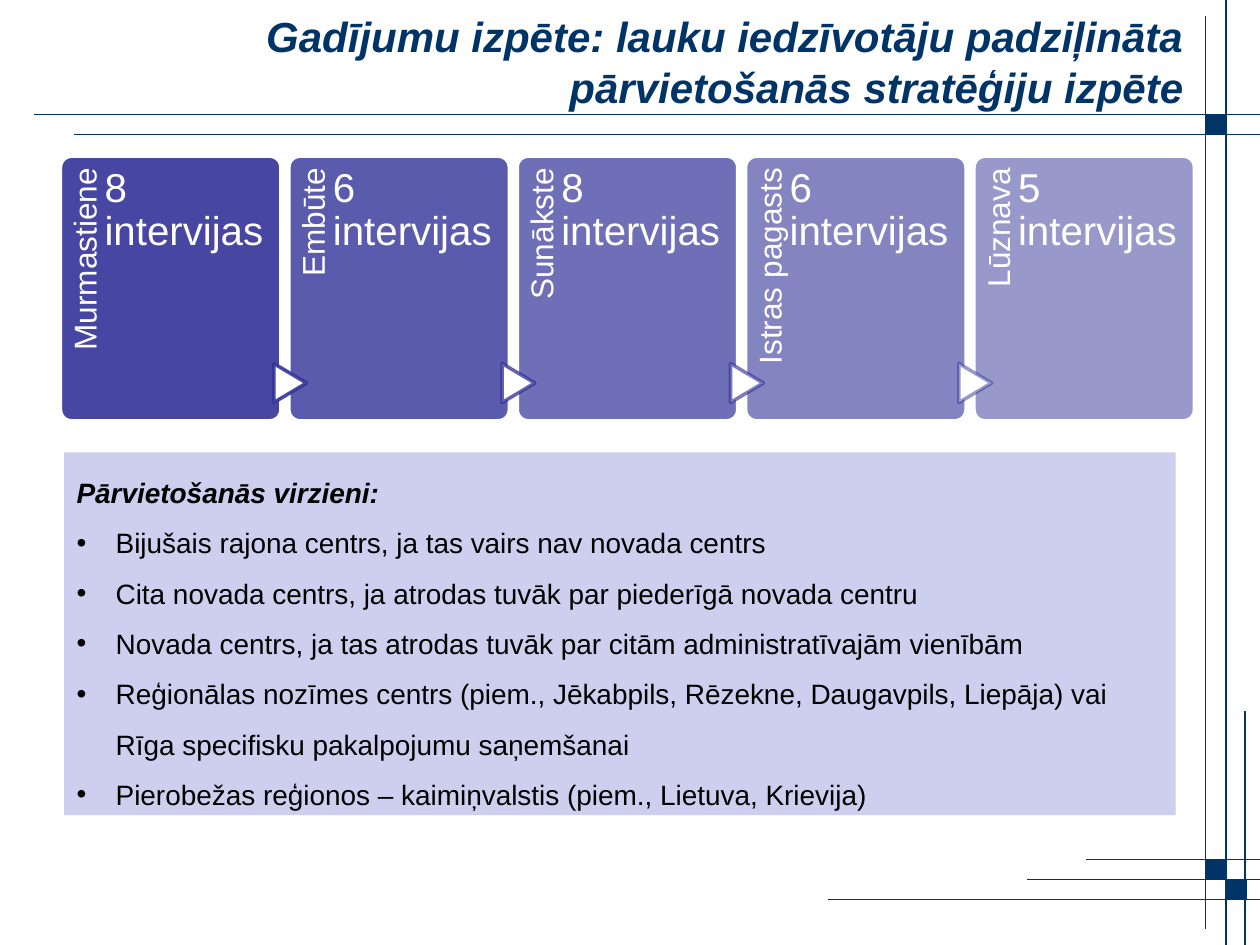
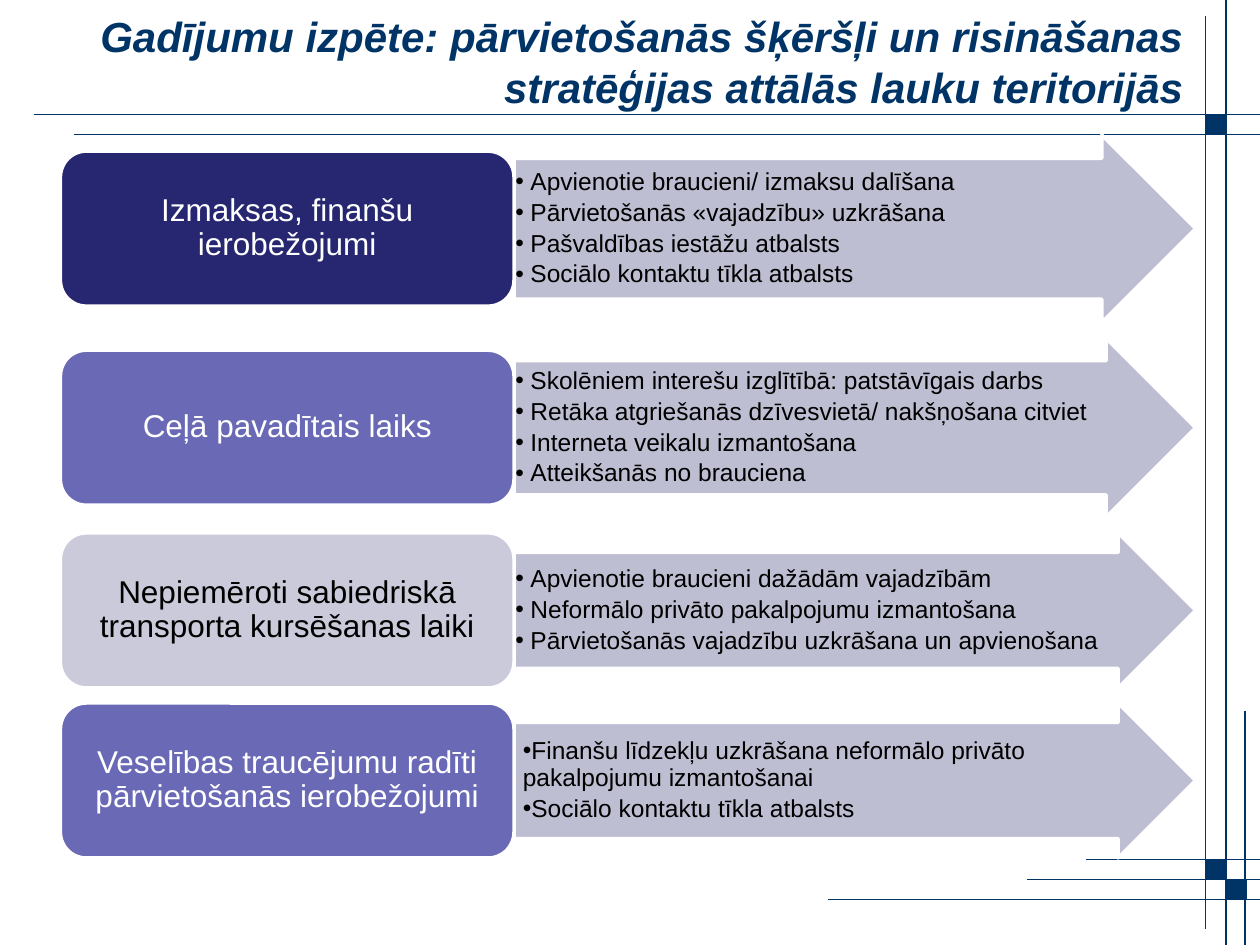
from lxml.etree import SubElement
from pptx import Presentation
from pptx.dml.color import RGBColor
from pptx.enum.shapes import MSO_CONNECTOR, MSO_SHAPE
from pptx.enum.text import MSO_ANCHOR, PP_ALIGN
from pptx.oxml.ns import qn
from pptx.util import Inches, Pt

COLORS = {
    "navy": "003366", "indigo": "333399", "white": "FFFFFF", "black": "000000",
    "panel": "CECEEF", "arrow": "B7B7CF", "dark": "262671", "mid": "6969B5",
    "pale": "CACADA",
}
FONT = "Arial"

# Frame lines as x1, y1, x2, y2, and the left and top of each small square
FRAME_LINES = [
    (0.27, 0.91, 10, 0.91), (0.59, 1.07, 10, 1.07),
    (9.73, 0, 9.73, 7.5), (9.57, 0.13, 9.57, 7.37),
    (8.15, 6.98, 10, 6.98), (8.62, 6.82, 10, 6.82),
    (6.57, 7.14, 10, 7.14), (9.88, 5.64, 9.88, 7.5),
]
FRAME_SQUARES = [(9.57, 0.91), (9.57, 6.82), (9.73, 6.98)]

INTERVIEWS = [("Murmastiene", 8), ("Embūte", 6), ("Sunākste", 8),
              ("Istras pagasts", 6), ("Lūznava", 5)]

DIRECTIONS_HEAD = "Pārvietošanās virzieni:"
DIRECTIONS = [
    "Bijušais rajona centrs, ja tas vairs nav novada centrs",
    "Cita novada centrs, ja atrodas tuvāk par piederīgā novada centru",
    "Novada centrs, ja tas atrodas tuvāk par citām administratīvajām vienībām",
    "Reģionālas nozīmes centrs (piem., Jēkabpils, Rēzekne, Daugavpils, Liepāja) "
    "vai Rīga specifisku pakalpojumu saņemšanai",
    "Pierobežas reģionos – kaimiņvalstis (piem., Lietuva, Krievija)",
]

# Top, arrow height, topic, topic fill, topic text colour, bullet indent, strategies
OBSTACLES = [
    (1.2, 1.49, "Izmaksas, finanšu ierobežojumi", "dark", "white", (0.12, -0.12),
     ["Apvienotie braucieni/ izmaksu dalīšana",
      "Pārvietošanās «vajadzību» uzkrāšana",
      "Pašvaldības iestāžu atbalsts",
      "Sociālo kontaktu tīkla atbalsts"]),
    (2.78, 1.42, "Ceļā pavadītais laiks", "mid", "white", (0.12, -0.12),
     ["Skolēniem interešu izglītībā: patstāvīgais darbs",
      "Retāka atgriešanās dzīvesvietā/ nakšņošana citviet",
      "Interneta veikalu izmantošana",
      "Atteikšanās no brauciena"]),
    (4.23, 1.23, "Nepiemēroti sabiedriskā transporta kursēšanas laiki", "pale", "black",
     (0.12, -0.12),
     ["Apvienotie braucieni dažādām vajadzībām",
      "Neformālo privāto pakalpojumu izmantošana",
      "Pārvietošanās vajadzību uzkrāšana un apvienošana"]),
    (5.58, 1.23, "Veselības traucējumu radīti pārvietošanās ierobežojumi", "mid", "white",
     (0.06, 0),
     ["Finanšu līdzekļu uzkrāšana neformālo privāto pakalpojumu izmantošanai",
      "Sociālo kontaktu tīkla atbalsts"]),
]


def rgb(name):
    return RGBColor.from_string(COLORS[name])


def paint(fill, color, opacity=100):
    """Set a solid fill, with opacity in percent."""
    fill.solid()
    fill.fore_color.rgb = rgb(color)
    if opacity < 100:
        for tint in fill._xPr.iter(qn("a:srgbClr")):
            SubElement(tint, qn("a:alpha"), val=str(round(opacity * 1000)))


def add_box(page, kind, box, fill, opacity=100, line=None, width=2,
            line_opacity=100, adjust=(), rotation=0):
    shape = page.shapes.add_shape(kind, *map(Inches, box))
    shape.shadow.inherit = False
    shape.rotation = rotation
    for index, value in enumerate(adjust):
        shape.adjustments[index] = value
    paint(shape.fill, fill, opacity)
    if line:
        shape.line.width = Pt(width)
        paint(shape.line.fill, line, line_opacity)
    else:
        shape.line.fill.background()
    return shape


def set_frame(shape, anchor=MSO_ANCHOR.TOP, insets=(0.1, 0.05, 0.1, 0.05)):
    frame = shape.text_frame
    frame.word_wrap = True
    frame.vertical_anchor = anchor
    (frame.margin_left, frame.margin_top,
     frame.margin_right, frame.margin_bottom) = map(Inches, insets)
    return frame


def write(frame, text, size=18, color="black", bold=False, italic=False,
          align=PP_ALIGN.LEFT, spacing=1.0, after=0, bullet=None):
    """Add a paragraph; bullet is its left margin and first-line indent."""
    para = frame.paragraphs[0]
    if para.runs:
        para = frame.add_paragraph()
    if bullet:
        props = para._p.get_or_add_pPr()
        margin, indent = map(Inches, bullet)
        props.set("marL", str(margin))
        props.set("indent", str(indent))
        SubElement(props, qn("a:buFont"), typeface=FONT)
        SubElement(props, qn("a:buChar"), char="•")
    para.alignment = align
    para.line_spacing = spacing
    para.space_after = Pt(after)
    span = para.add_run()
    span.text = text
    font = span.font
    font.name, font.size, font.bold, font.italic = FONT, Pt(size), bold, italic
    font.color.rgb = rgb(color)


def add_text(page, box, text, anchor=MSO_ANCHOR.TOP, insets=(0.1, 0.05, 0.1, 0.05),
             rotation=0, **style):
    shape = page.shapes.add_textbox(*map(Inches, box))
    shape.rotation = rotation
    write(set_frame(shape, anchor, insets), text, **style)


def add_page(deck, title):
    """Add a slide with the shared line frame and title."""
    page = deck.slides.add_slide(deck.slide_layouts[6])
    for ends in FRAME_LINES:
        rule = page.shapes.add_connector(MSO_CONNECTOR.STRAIGHT, *map(Inches, ends))
        rule.line.width = Pt(0.75)
        rule.line.color.rgb = rgb("navy")
        SubElement(rule._element.spPr, qn("a:effectLst"))
    for left, top in FRAME_SQUARES:
        add_box(page, MSO_SHAPE.RECTANGLE, (left, top, 0.16, 0.16), "navy",
                line="navy", width=0.75)
    add_text(page, (0.51, 0.13, 8.98, 0.71), title, MSO_ANCHOR.MIDDLE, size=24,
             color="navy", bold=True, italic=True, align=PP_ALIGN.RIGHT)
    return page


def add_interview_cards(page, box):
    left, top, width, height = box
    card_width = 1.75
    step = (width - card_width) / (len(INTERVIEWS) - 1)
    for index, (place, count) in enumerate(INTERVIEWS):
        x = left + index * step
        add_box(page, MSO_SHAPE.ROUNDED_RECTANGLE, (x, top, card_width, height),
                "indigo", opacity=90 - 10 * index, line="white", adjust=[0.05])
        # Place name, read upwards along the card's left side
        add_text(page, (x - 0.685, top + 0.69, 1.72, 0.35), place, rotation=270,
                 insets=(0, 0.07, 0.09, 0), color="white",
                 align=PP_ALIGN.RIGHT, spacing=0.9)
        # Marker that leads in from the card before
        if index:
            add_box(page, MSO_SHAPE.FLOWCHART_EXTRACT,
                    (x - 0.145, top + 1.67, 0.31, 0.26), "white", line="indigo",
                    line_opacity=90 - 40 * (index - 1) / 3, rotation=90)
        add_text(page, (x + 0.35, top, 1.3, height), f"{count} intervijas",
                 insets=(0, 0.09, 0, 0), size=23, color="white", spacing=0.9)


def add_directions(page, box):
    panel = add_box(page, MSO_SHAPE.RECTANGLE, box, "panel")
    frame = set_frame(panel)
    write(frame, DIRECTIONS_HEAD, size=16, bold=True, italic=True, spacing=1.5)
    for direction in DIRECTIONS:
        write(frame, direction, size=16, spacing=1.5, bullet=(0.31, -0.31))


def add_obstacle(page, box, arrow_height, topic, fill, color, bullet, strategies):
    left, top, width, height = box
    topic_width = 3.6
    # Arrow with the strategies, centred on the topic's height
    arrow = add_box(page, MSO_SHAPE.RIGHT_ARROW,
                    (left + topic_width, top + (height - arrow_height) / 2,
                     width - topic_width, arrow_height),
                    "arrow", opacity=90, line="white", adjust=[0.75, 0.5])
    frame = set_frame(arrow, MSO_ANCHOR.MIDDLE, (0.01,) * 4)
    for strategy in strategies:
        write(frame, strategy, size=14, spacing=0.9, after=2.5, bullet=bullet)
    # Topic
    label = add_box(page, MSO_SHAPE.ROUNDED_RECTANGLE,
                    (left, top, topic_width, height), fill, line="white")
    write(set_frame(label, MSO_ANCHOR.MIDDLE, (0.07, 0.04, 0.07, 0.04)), topic,
          color=color, align=PP_ALIGN.CENTER, spacing=0.9)


def build_interviews(deck):
    page = add_page(deck, "Gadījumu izpēte: lauku iedzīvotāju padziļināta "
                          "pārvietošanās stratēģiju izpēte")
    add_interview_cards(page, (0.48, 1.24, 9, 2.1))
    add_directions(page, (0.51, 3.59, 8.82, 2.88))


def build_obstacles(deck):
    page = add_page(deck, "Gadījumu izpēte: pārvietošanās šķēršļi un risināšanas "
                          "stratēģijas attālās lauku teritorijās")
    for top, *details in OBSTACLES:
        add_obstacle(page, (0.48, top, 9.01, 1.23), *details)


def main():
    deck = Presentation()
    deck.slide_width, deck.slide_height = Inches(10), Inches(7.5)
    build_interviews(deck)
    build_obstacles(deck)
    deck.save("out.pptx")


if __name__ == "__main__":
    main()
